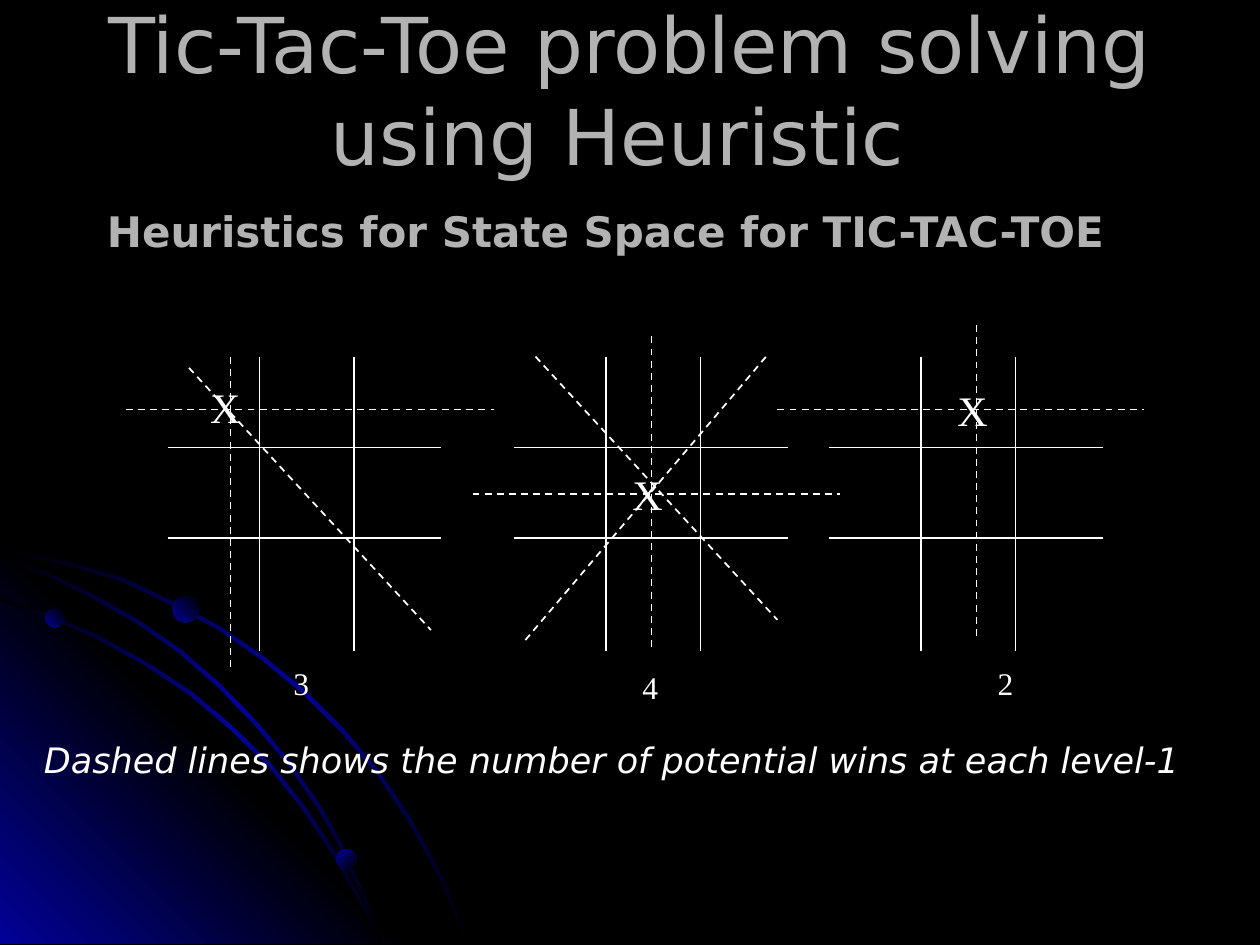
from lxml.etree import SubElement
from pptx import Presentation
from pptx.dml.color import RGBColor as Rgb
from pptx.enum.dml import MSO_LINE as Dash
from pptx.enum.shapes import MSO_CONNECTOR as Conn, MSO_SHAPE as Geo
from pptx.enum.text import MSO_ANCHOR as Anchor, MSO_AUTO_SIZE as Fit, PP_ALIGN as Align
from pptx.oxml.ns import qn
from pptx.util import Cm, Pt

HUES = {"back": "000000", "glow": "010199", "head": "B2B2B2", "ink": "FFFFFF"}
SANS, SERIF = "DejaVu Sans", "Times New Roman"
WIDE, HIGH = 10, 7.5
FADE = [(0, "back"), (50, "glow"), (100, "back")]
RIM = [(0, "glow"), (50, "back"), (100, "glow")]
BALL = [(0, "glow"), (100, "back")]

# Upper edge of each orbit
ORBITS = [
    [(0, 4.35), (0.28, 4.41), (0.57, 4.47), (0.98, 4.59), (1.36, 4.77), (1.74, 4.97),
     (2.09, 5.21), (2.42, 5.48), (2.72, 5.78), (3, 6.11), (3.25, 6.48), (3.39, 6.73),
     (3.52, 6.98), (3.62, 7.23), (3.72, 7.49)],
    [(0, 4.75), (0.41, 4.88), (0.79, 5.05), (1.17, 5.26), (1.52, 5.49), (1.84, 5.76),
     (2.15, 6.06), (2.42, 6.4), (2.66, 6.76), (2.86, 7.12), (2.96, 7.3), (3.03, 7.49)],
    [(0, 4.42), (0.39, 4.55), (0.76, 4.73), (1.11, 4.93), (1.44, 5.16), (1.75, 5.43),
     (2.04, 5.73), (2.29, 6.03), (2.54, 6.39), (2.69, 6.65), (2.82, 6.93), (2.94, 7.2),
     (3.03, 7.49)],
]
CORNER = [(0, 4.27), (3.22, 7.49), (0, 7.49)]
# Left, top, size, gradient angle
DOTS = [(0.36, 4.83, 0.15, 315), (2.67, 6.74, 0.16, 45), (1.37, 4.73, 0.21, 315)]

# Board left, X place, score and its place, dashed winning lines
BOARDS = [
    (1.33, (1.57, 2.98), "3", (2.23, 5.22),
     [(1.5, 2.92, 3.42, 5), (1, 3.25, 3.92, 3.25), (1.83, 2.83, 1.83, 5.33)]),
    (4.08, (4.92, 3.67), "4", (5, 5.25),
     [(4.25, 2.83, 6.17, 4.92), (4.17, 5.08, 6.08, 2.83),
      (3.75, 3.92, 6.67, 3.92), (5.17, 2.67, 5.17, 5.17)]),
    (6.58, (7.5, 3), "2", (7.82, 5.22),
     [(6.17, 3.25, 9.08, 3.25), (7.75, 2.58, 7.75, 5.08)]),
]


def cm(*inches):
    """Turn inches on the slide into lengths."""
    return [Cm(v * 2.54) for v in inches]


def write(frame, text, size, font=SANS, hue="ink", align=None, **style):
    para = frame.paragraphs[0]
    para.alignment = align
    run = para.add_run()
    run.text = text
    run.font.size, run.font.name = Pt(size), font
    run.font.color.rgb = Rgb.from_string(HUES[hue])
    for key, value in style.items():
        setattr(run.font, key, value)


class Deck:
    def __init__(self):
        self.file = Presentation()
        self.file.slide_width, self.file.slide_height = cm(WIDE, HIGH)
        self.slide = self.file.slides.add_slide(self.file.slide_layouts[5])
        self.shapes = self.slide.shapes
        fill = self.slide.background.fill
        fill.solid()
        fill.fore_color.rgb = Rgb.from_string(HUES["back"])

    def title(self, text, box, **style):
        head = self.shapes.title
        head.left, head.top, head.width, head.height = cm(*box)
        frame = head.text_frame
        frame.auto_size, frame.word_wrap = Fit.NONE, True
        frame.vertical_anchor = Anchor.MIDDLE
        write(frame, text, **style)

    def text(self, text, box, **style):
        frame = self.shapes.add_textbox(*cm(*box)).text_frame
        frame.word_wrap, frame.auto_size = False, Fit.SHAPE_TO_FIT_TEXT
        write(frame, text, **style)

    def line(self, ends, home=None, width=0.75, dash=None):
        line = (home or self.slide).shapes.add_connector(Conn.STRAIGHT, *cm(*ends))
        line.line.color.rgb = Rgb.from_string(HUES["ink"])
        line.line.width = Pt(width)
        if dash:
            line.line.dash_style = dash
        SubElement(line._element.spPr, qn("a:effectLst"))

    def paint(self, shape, stops, angle):
        shape.shadow.inherit = False
        shape.line.fill.background()
        shape.fill.gradient()
        shape.fill.gradient_angle = (360 - angle) % 360
        rows = shape._element.spPr.find(qn("a:gradFill")).find(qn("a:gsLst"))
        rows[:] = []
        for spot, hue in stops:
            stop = SubElement(rows, qn("a:gs"), pos=str(spot * 1000))
            SubElement(stop, qn("a:srgbClr"), val=HUES[hue])

    def free(self, home, points, stops, angle):
        places = [cm(*point) for point in points]
        pen = home.shapes.build_freeform(*places[0])
        pen.add_line_segments(places[1:], close=True)
        self.paint(pen.convert_to_shape(), stops, angle)

    def orbit(self, home, edge):
        lower = [(max(x - 0.02, 0), min(y + 0.02, 7.49)) for x, y in reversed(edge)]
        self.free(home, edge + lower, FADE, 45)

    def dot(self, home, left, top, size, angle):
        ball = home.shapes.add_shape(Geo.OVAL, *cm(left, top, size, size))
        self.paint(ball, BALL, angle)

    def board(self, left):
        grid = self.shapes.add_group_shape()
        for x in (left + 0.73, left + 1.48):
            self.line((x, 2.83, x, 5.17), grid)
        for y in (3.55, 4.27):
            self.line((left, y, left + 2.17, y), grid)


def main():
    deck = Deck()

    # Orbits in the lower left corner
    decor = deck.shapes.add_group_shape()
    deck.orbit(decor, ORBITS[0])
    deck.free(decor, CORNER, RIM, 315)
    for edge in ORBITS[1:]:
        deck.orbit(decor, edge)
    for dot in DOTS:
        deck.dot(decor, *dot)

    # Headings
    deck.title("Tic-Tac-Toe problem solving using Heuristic ", (0.5, 0.08, 9, 1.25),
               size=44, hue="head", align=Align.CENTER)
    deck.text("Heuristics for State Space for TIC-TAC-TOE", (0.75, 1.58, 8.25, 0.5),
              size=24, hue="head", bold=True)

    # Boards with their marks, winning lines and scores
    for left, mark, score, place, wins in BOARDS:
        deck.board(left)
        deck.text("X", (*mark, 0.43, 0.5), size=24, font=SERIF)
        for ends in wins:
            deck.line(ends, width=1, dash=Dash.DASH)
        deck.text(score, (*place, 0.32, 0.4), size=18, font=SERIF)

    # Caption
    deck.text("Dashed lines shows the number of potential wins at each level-1",
              (0.25, 5.81, 9.22, 0.43), size=20, italic=True)

    deck.file.save("out.pptx")


if __name__ == "__main__":
    main()
